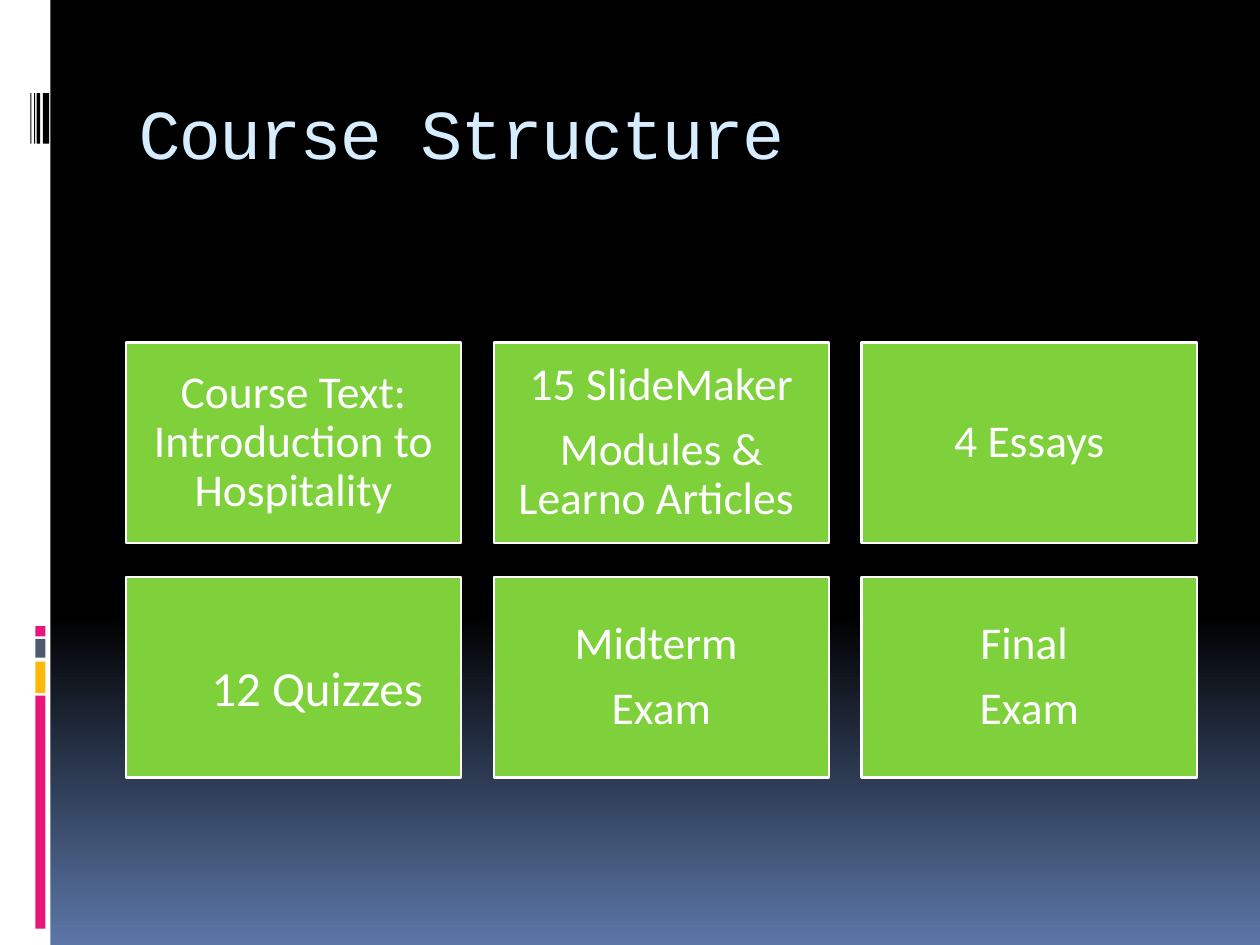
"""Build the course structure slide with its grid of six tiles."""
from typing import NamedTuple

from pptx import Presentation
from pptx.dml.color import RGBColor
from pptx.enum.shapes import MSO_SHAPE
from pptx.enum.text import MSO_ANCHOR, MSO_AUTO_SIZE, PP_ALIGN
from pptx.shapes.autoshape import Shape
from pptx.slide import Slide
from pptx.text.text import TextFrame
from pptx.util import Inches, Pt

BLACK = RGBColor(0x00, 0x00, 0x00)
WHITE = RGBColor(0xFF, 0xFF, 0xFF)
BLUE = RGBColor(0x5B, 0x77, 0xA8)
PALE = RGBColor(0xD6, 0xEC, 0xFF)
GREEN = RGBColor(0x7F, 0xD1, 0x3B)
PINK = RGBColor(0xEA, 0x15, 0x7A)
GOLD = RGBColor(0xFE, 0xB8, 0x0A)
SLATE = RGBColor(0x4E, 0x5B, 0x6F)

COLS = 3
LEFT, TOP = 1, 2.72
WIDE, HIGH = 2.66, 1.59
STEP_X, STEP_Y = 2.92, 1.86


class Box(NamedTuple):
    left: float
    top: float
    width: float
    height: float


class Bar(NamedTuple):
    box: Box
    color: RGBColor


BARS = [
    Bar(Box(0, 0, 0.4, 7.5), WHITE),
    Bar(Box(0.28, 5.52, 0.08, 1.85), PINK),
    Bar(Box(0.28, 5.25, 0.08, 0.25), GOLD),
    Bar(Box(0.28, 5.07, 0.08, 0.15), SLATE),
    Bar(Box(0.28, 4.97, 0.08, 0.08), PINK),
    *(Bar(Box(left, 0.74, width, 0.4), BLACK)
      for left, width in [(0.34, 0.05), (0.29, 0.03), (0.27, 0.01), (0.24, 0.01)]),
]
TILES = [
    ["Course Text: Introduction to Hospitality"],
    ["15 SlideMaker", "Modules & Learno Articles "],
    ["4 Essays"],
    [],
    ["Midterm ", "Exam"],
    ["Final ", "Exam"],
]


def add_rect(slide: Slide, box: Box, color: RGBColor) -> Shape:
    rect = slide.shapes.add_shape(MSO_SHAPE.RECTANGLE, *map(Inches, box))
    rect.shadow.inherit = False
    rect.fill.solid()
    rect.fill.fore_color.rgb = color
    rect.line.fill.background()
    return rect


def write(frame: TextFrame, lines: list[str], face: str, size: int, color: RGBColor) -> None:
    frame.text = "\n".join(lines)
    for para in frame.paragraphs:
        para.font.name = face
        para.font.size = Pt(size)
        para.font.color.rgb = color


def add_tile(slide: Slide, box: Box, lines: list[str]) -> None:
    tile = add_rect(slide, box, GREEN)
    tile.line.color.rgb = WHITE
    tile.line.width = Pt(1.5)
    if not lines:
        return
    frame = tile.text_frame
    frame.word_wrap = True
    frame.vertical_anchor = MSO_ANCHOR.MIDDLE
    frame.margin_left = frame.margin_right = Inches(0.11)
    frame.margin_top = frame.margin_bottom = Inches(0.11)
    write(frame, lines, "Calibri", 26, WHITE)
    for para in frame.paragraphs:
        para.alignment = PP_ALIGN.CENTER
        para.line_spacing = 0.9
        para.space_after = Pt(9.1)


def set_title(slide: Slide) -> None:
    title = slide.shapes.title
    title.left, title.top, title.width, title.height = map(Inches, (1, 0.56, 8.5, 1))
    frame = title.text_frame
    frame.auto_size = MSO_AUTO_SIZE.NONE
    frame.vertical_anchor = MSO_ANCHOR.TOP
    frame.margin_top = Inches(0.15)
    write(frame, ["Course Structure"], "Courier New", 40, PALE)
    para = frame.paragraphs[0]
    para.alignment = PP_ALIGN.LEFT
    para.runs[0]._r.get_or_add_rPr().set("spc", "-100")


def set_back(slide: Slide) -> None:
    fill = slide.background.fill
    fill.gradient()
    fill.gradient_angle = 270
    for stop, place, color in zip(fill.gradient_stops, (0.65, 1), (BLACK, BLUE)):
        stop.position = place
        stop.color.rgb = color


def main() -> None:
    deck = Presentation()
    deck.slide_width, deck.slide_height = Inches(10), Inches(7.5)
    slide = deck.slides.add_slide(deck.slide_layouts[5])
    set_back(slide)
    for bar in BARS:
        add_rect(slide, bar.box, bar.color)
    set_title(slide)
    for num, lines in enumerate(TILES):
        row, col = divmod(num, COLS)
        add_tile(slide, Box(LEFT + col * STEP_X, TOP + row * STEP_Y, WIDE, HIGH), lines)
    quiz = slide.shapes.add_textbox(*map(Inches, (1.58, 5.17, 1.93, 0.57)))
    quiz.text_frame.auto_size = MSO_AUTO_SIZE.SHAPE_TO_FIT_TEXT
    write(quiz.text_frame, ["12 Quizzes"], "Calibri", 28, WHITE)
    deck.save("out.pptx")


if __name__ == "__main__":
    main()
